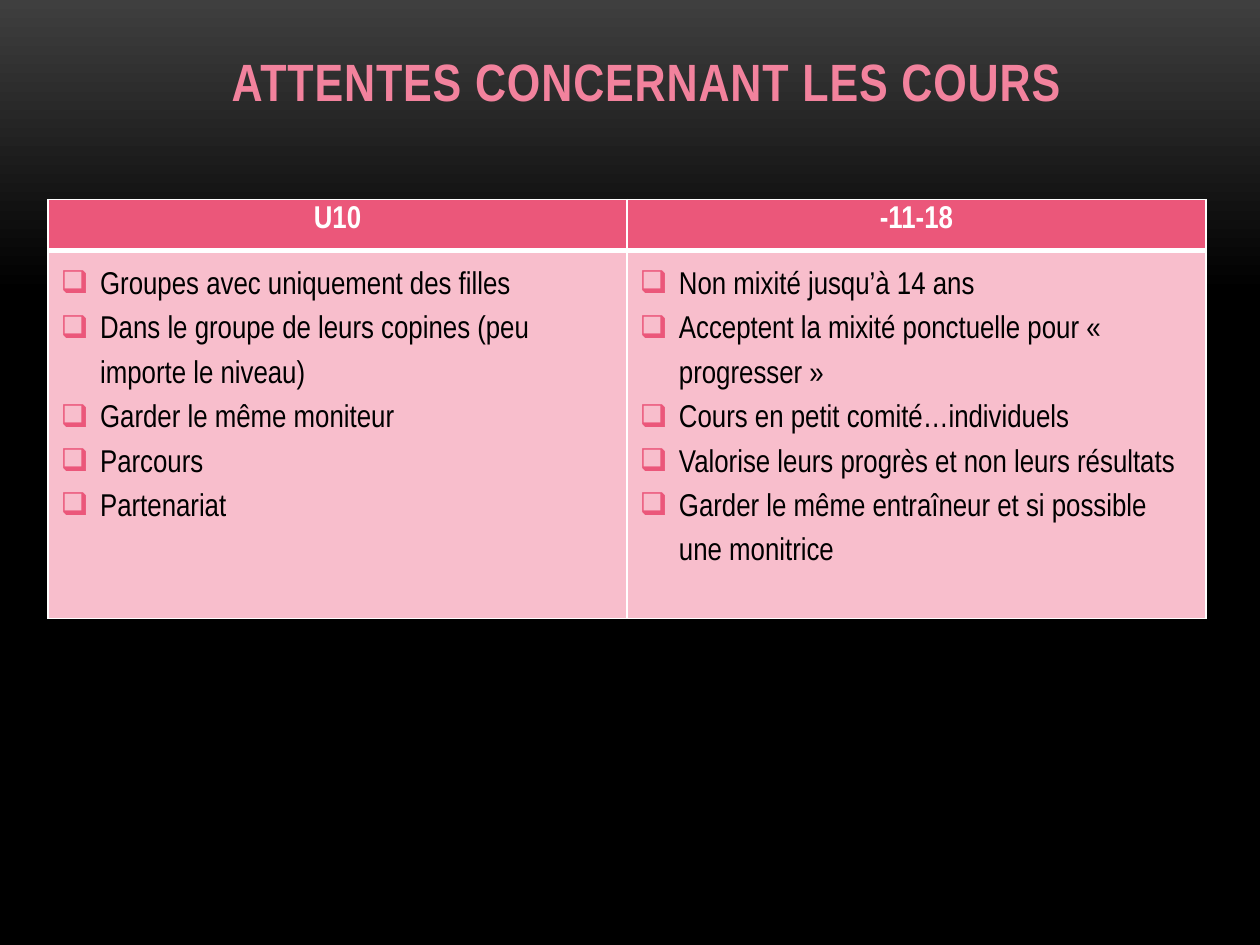
"""Build the slide on what the girls expect from lessons, by age group."""
from copy import deepcopy

from lxml import etree
from pptx import Presentation
from pptx.dml.color import RGBColor
from pptx.enum.text import MSO_ANCHOR, MSO_AUTO_SIZE, PP_ALIGN
from pptx.oxml.ns import qn
from pptx.util import Pt

CENTER, LEFT = PP_ALIGN.CENTER, PP_ALIGN.LEFT
BOTTOM, NO_AUTOFIT = MSO_ANCHOR.BOTTOM, MSO_AUTO_SIZE.NONE
FONT = "Arial Narrow"
COLORS = {
    "title": "F2829D", "header": "EB577A", "body": "F8BECC", "white": "FFFFFF",
    "black": "000000", "glow": "3F3F3F",
}
EXPECTATIONS = {
    "U10": [
        "Groupes avec uniquement des filles",
        "Dans le groupe de leurs copines (peu importe le niveau)",
        "Garder le même moniteur",
        "Parcours",
        "Partenariat",
    ],
    "-11-18": [
        "Non mixité jusqu’à 14 ans",
        "Acceptent la mixité ponctuelle pour « progresser »",
        "Cours en petit comité…individuels",
        "Valorise leurs progrès et non leurs résultats",
        "Garder le même entraîneur et si possible une monitrice",
    ],
}
INDENT = Pt(22.5)


def write(paragraph, text, size, color, bold, align):
    run = paragraph.add_run()
    run.text = text
    paragraph.alignment = align
    for name, value in {"name": FONT, "size": Pt(size), "bold": bold}.items():
        setattr(run.font, name, value)
    run.font.color.rgb = RGBColor.from_string(COLORS[color])
    return run


def style_cell(cell, color, border_widths):
    properties = cell._tc.get_or_add_tcPr()
    for side, width in border_widths.items():
        line = etree.SubElement(properties, qn(f"a:ln{side}"), w=str(Pt(width)))
        fill = etree.SubElement(line, qn("a:solidFill"))
        etree.SubElement(fill, qn("a:srgbClr"), val=COLORS["white"])
    cell.fill.solid()
    cell.fill.fore_color.rgb = RGBColor.from_string(COLORS[color])


presentation = Presentation()
presentation.slide_width, presentation.slide_height = Pt(720), Pt(540)
slide = presentation.slides.add_slide(presentation.slide_layouts[5])

background = slide.background.fill
background.gradient()
background.gradient_angle = 270
for stop, (position, color) in zip(background.gradient_stops, [(0, "glow"), (0.31, "black")]):
    stop.position = position
    stop.color.rgb = RGBColor.from_string(COLORS[color])
stop_list = next(slide._element.iter(qn("a:gsLst")))
last_stop = deepcopy(stop_list[-1])
last_stop.set("pos", "100000")
stop_list.append(last_stop)

title = slide.shapes.title
for name, value in {"left": 27.5, "top": 21, "width": 684, "height": 46.5}.items():
    setattr(title, name, Pt(value))
for name, value in {"vertical_anchor": BOTTOM, "auto_size": NO_AUTOFIT, "word_wrap": True}.items():
    setattr(title.text_frame, name, value)
title_run = write(title.text_frame.paragraphs[0], "ATTENTES CONCERNANT LES COURS", 30, "title", True, CENTER)
title_run.font._element.set("spc", "50")

table = slide.shapes.add_table(2, len(EXPECTATIONS), Pt(27.5), Pt(114), Pt(661.6), Pt(239.5)).table
table.rows[0].height, table.rows[1].height = Pt(29.2), Pt(210.3)

for column, (group, wishes) in enumerate(EXPECTATIONS.items()):
    table.columns[column].width = Pt(330.8)
    header, body = table.cell(0, column), table.cell(1, column)
    style_cell(header, "header", {"L": 1, "R": 1, "T": 1, "B": 3})
    style_cell(body, "body", {"L": 1, "R": 1, "T": 3, "B": 1})
    write(header.text_frame.paragraphs[0], group, 18, "white", True, CENTER)
    for index, wish in enumerate(wishes):
        frame = body.text_frame
        paragraph = frame.add_paragraph() if index else frame.paragraphs[0]
        properties = paragraph._p.get_or_add_pPr()
        properties.set("marL", str(INDENT))
        properties.set("indent", str(-INDENT))
        bullet_color = etree.SubElement(properties, qn("a:buClr"))
        etree.SubElement(bullet_color, qn("a:srgbClr"), val=COLORS["header"])
        etree.SubElement(properties, qn("a:buChar"), char="❑")
        paragraph.line_spacing = 1.5
        write(paragraph, wish, 18, "black", False, LEFT)

presentation.save("out.pptx")
